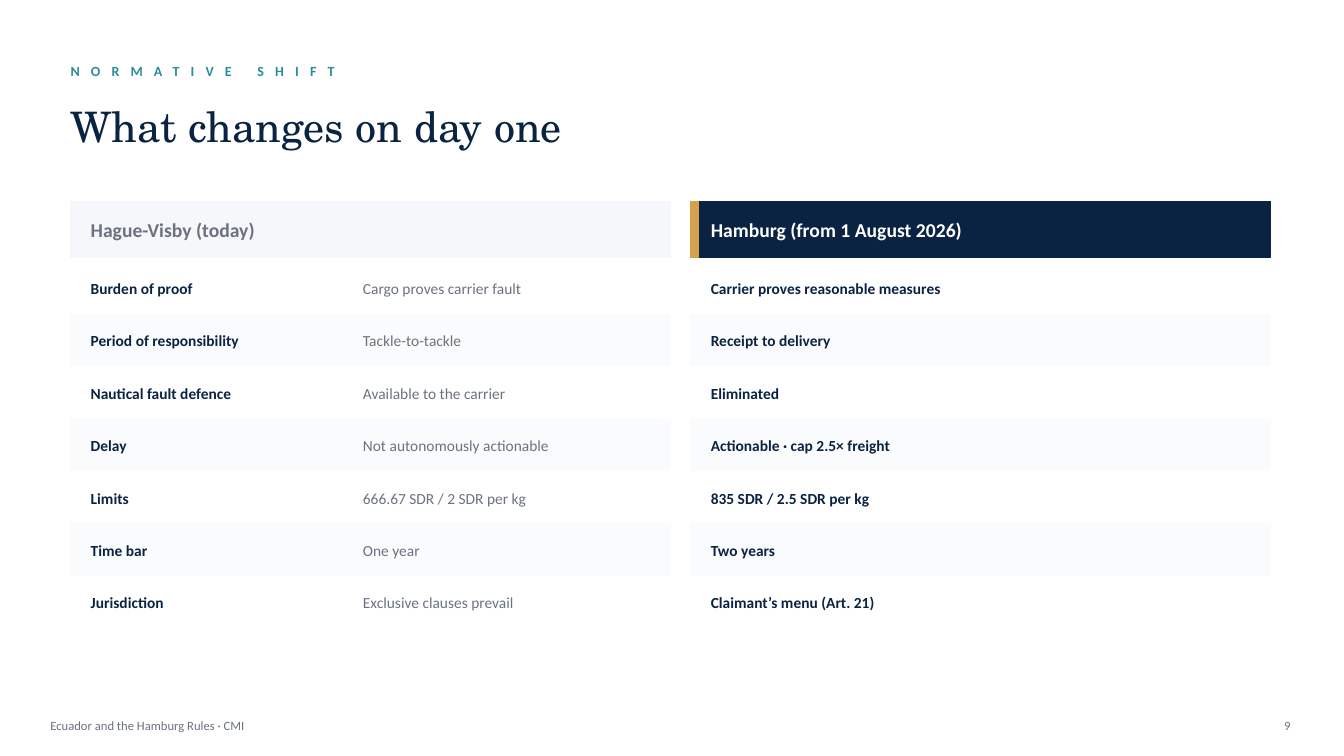
from pptx import Presentation
from pptx.dml.color import RGBColor
from pptx.enum.shapes import MSO_SHAPE
from pptx.enum.text import MSO_ANCHOR, MSO_AUTO_SIZE, PP_ALIGN
from pptx.util import Inches, Pt

RECT = MSO_SHAPE.RECTANGLE
MIDDLE = MSO_ANCHOR.MIDDLE
FIXED = MSO_AUTO_SIZE.NONE
LEFT, RIGHT = PP_ALIGN.LEFT, PP_ALIGN.RIGHT

SANS, SERIF = "Calibri", "TeX Gyre Schola"
NAVY, GRAY, TEAL, GOLD = "0A2342", "6B7280", "2C8C99", "D4A24C"
WHITE, PALE, MIST = "FFFFFF", "F5F7FA", "FAFBFC"

HEAD, ROW, GAP, PAD = 0.55, 0.52, 0.05, 0.2
TERMS = [
    ("Burden of proof", "Cargo proves carrier fault", "Carrier proves reasonable measures"),
    ("Period of responsibility", "Tackle-to-tackle", "Receipt to delivery"),
    ("Nautical fault defence", "Available to the carrier", "Eliminated"),
    ("Delay", "Not autonomously actionable", "Actionable · cap 2.5× freight"),
    ("Limits", "666.67 SDR / 2 SDR per kg", "835 SDR / 2.5 SDR per kg"),
    ("Time bar", "One year", "Two years"),
    ("Jurisdiction", "Exclusive clauses prevail", "Claimant’s menu (Art. 21)"),
]


def color(code):
    return RGBColor.from_string(code)


def place(shape, left, top, width, height):
    shape.left, shape.top = Inches(left), Inches(top)
    shape.width, shape.height = Inches(width), Inches(height)


def write(shape, text, size, ink, bold=False, face=SANS, align=LEFT):
    frame = shape.text_frame
    frame.word_wrap = True
    frame.auto_size = FIXED
    frame.vertical_anchor = MIDDLE
    frame.margin_left = frame.margin_right = 0
    frame.margin_top = frame.margin_bottom = 0
    para = frame.paragraphs[0]
    para.text = text
    para.alignment = align
    font = para.font
    font.name, font.size, font.bold = face, Pt(size), bold
    font.color.rgb = color(ink)
    return para


def label(slide, box, *args, **style):
    shape = slide.shapes.add_textbox(*map(Inches, box))
    return write(shape, *args, **style)


def block(slide, box, fill):
    shape = slide.shapes.add_shape(RECT, *map(Inches, box))
    shape.shadow.inherit = False
    shape.fill.solid()
    shape.fill.fore_color.rgb = color(fill)
    shape.line.color.rgb = color(fill)
    shape.line.width = Pt(1)


def heading(slide, left, top):
    para = label(slide, (left, top, 8, 0.3), "NORMATIVE SHIFT", 10, TEAL, bold=True)
    para.runs[0]._r.get_or_add_rPr().set("spc", "800")
    title = slide.shapes.title
    place(title, left, top + 0.35, 12, 0.7)
    write(title, "What changes on day one", 30, NAVY, face=SERIF)


def panel(slide, left, top, width, name, fill, ink, cols, accent=None):
    block(slide, (left, top, width, HEAD), fill)
    if accent:
        block(slide, (left, top, 0.08, HEAD), accent)
    label(slide, (left + PAD, top, 5.5, HEAD), name, 14, ink, bold=True)
    for i, term in enumerate(TERMS):
        y = top + HEAD + GAP + i * ROW
        block(slide, (left, y, width, ROW), MIST if i % 2 else WHITE)
        for index, shift, span, tone, bold in cols:
            label(slide, (left + shift, y, span, ROW), term[index], 11, tone, bold=bold)


def footer(slide, left, top, width):
    label(slide, (left, top, 8, 0.3), "Ecuador and the Hamburg Rules · CMI", 9, GRAY)
    label(slide, (left + width - 0.5, top, 0.5, 0.3), "9", 9, GRAY, align=RIGHT)


def main():
    deck = Presentation()
    deck.slide_width, deck.slide_height = Inches(13.33), Inches(7.5)
    slide = deck.slides.add_slide(deck.slide_layouts[5])
    heading(slide, 0.7, 0.55)
    panel(slide, 0.7, 2, 5.95, "Hague-Visby (today)", PALE, GRAY,
          [(0, PAD, 2.6, NAVY, True), (1, 2.9, 3, GRAY, False)])
    panel(slide, 6.85, 2, 5.75, "Hamburg (from 1 August 2026)", NAVY, WHITE,
          [(2, PAD, 5.5, NAVY, True)], GOLD)
    footer(slide, 0.5, 7.05, 12.3)
    deck.save("out.pptx")


if __name__ == "__main__":
    main()
